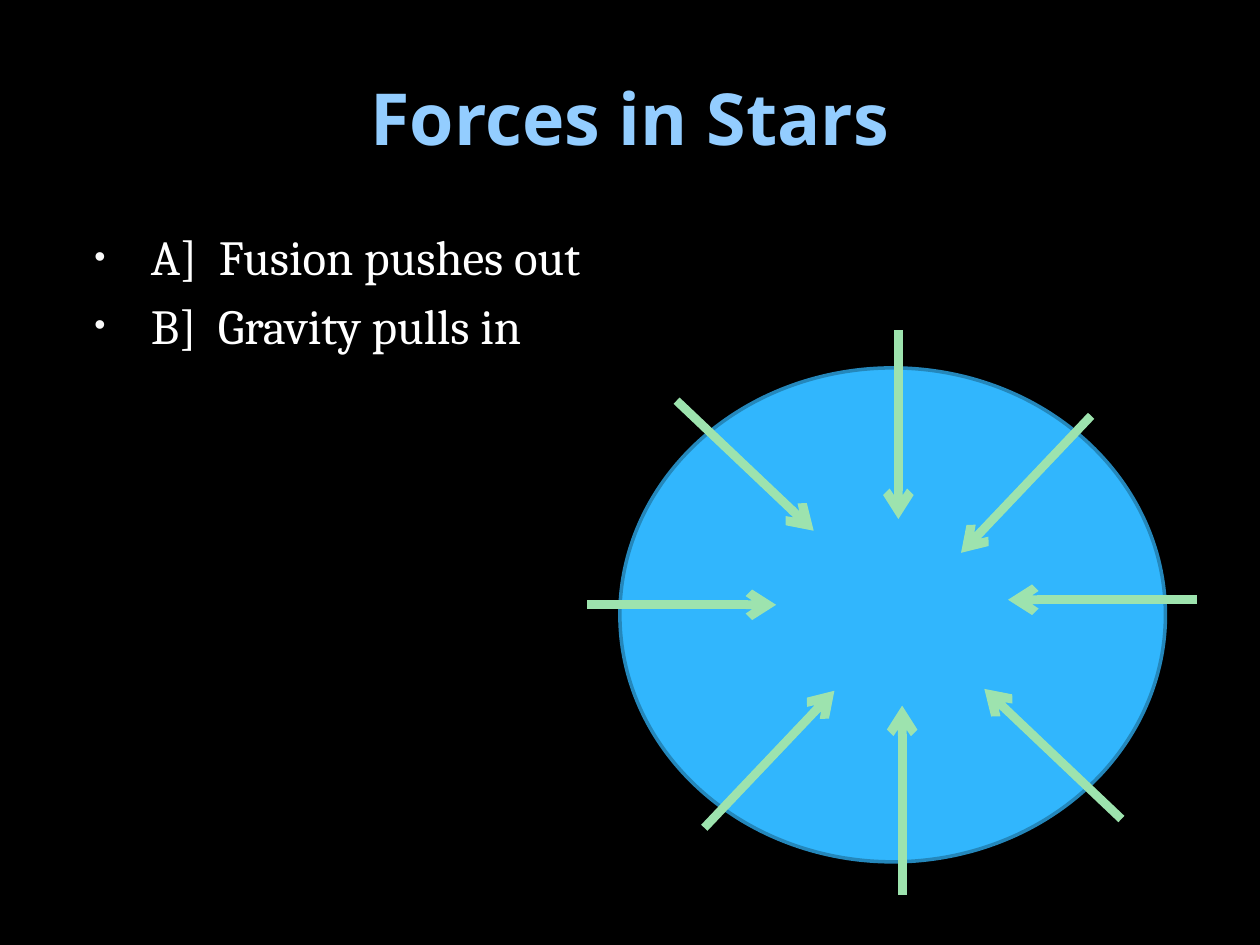
from dataclasses import dataclass
from math import cos, radians, sin

from pptx import Presentation
from pptx.dml.color import RGBColor
from pptx.enum.shapes import MSO_CONNECTOR, MSO_SHAPE
from pptx.enum.text import MSO_ANCHOR, PP_ALIGN
from pptx.oxml.ns import qn
from pptx.util import Inches, Pt
from lxml.etree import SubElement


@dataclass(frozen=True)
class Theme:
    background: str = "000000"
    title: str = "93CDFF"
    body: str = "FFFFFF"
    bullet: str = "F9F9F9"
    star: str = "31B6FD"
    star_edge: str = "2487BB"
    arrow: str = "9DE3AE"
    title_font: str = "Noto Sans"
    body_font: str = "Cambria"
    title_size: float = 41
    body_size: float = 28
    bullet_percent: int = 65
    star_edge_width: float = 2
    arrow_width: float = 5


def apply(target, values):
    for name, value in values.items():
        setattr(target, name, value)


class SlideBuilder:
    COLUMNS, ROWS = 100, 75

    def __init__(self, deck, theme):
        self.theme = theme
        self.column = deck.slide_width / self.COLUMNS
        self.row = deck.slide_height / self.ROWS
        self.page = deck.slides.add_slide(deck.slide_layouts[6])
        self.paint(self.page.background.fill, theme.background)

    def paint(self, fill, color):
        fill.solid()
        fill.fore_color.rgb = RGBColor.from_string(color)

    def place(self, *cells):
        units = (self.column, self.row) * 2
        return [round(cell * unit) for cell, unit in zip(cells, units)]

    def text(self, cells, lines, font, color, frame=None, paragraph=None, bullet=False):
        box = self.page.shapes.add_textbox(*self.place(*cells))
        apply(box.text_frame, {"word_wrap": True, **(frame or {})})
        box.text_frame.text = "\n".join(lines)
        for para in box.text_frame.paragraphs:
            apply(para, paragraph or {})
            for span in para.runs:
                apply(span.font, font)
                self.paint(span.font.fill, color)
            if bullet:
                self.bullet(para)

    def bullet(self, para):
        properties = para._p.get_or_add_pPr()
        properties.set("marL", str(Inches(0.6)))
        properties.set("indent", str(Inches(-0.45)))
        color = SubElement(properties, qn("a:buClr"))
        SubElement(color, qn("a:srgbClr"), val=self.theme.bullet)
        SubElement(properties, qn("a:buSzPct"), val=str(self.theme.bullet_percent * 1000))
        SubElement(properties, qn("a:buFont"), typeface="Arial")
        SubElement(properties, qn("a:buChar"), char="•")

    def star(self, cells):
        star = self.page.shapes.add_shape(MSO_SHAPE.OVAL, *self.place(*cells))
        star.shadow.inherit = False
        self.paint(star.fill, self.theme.star)
        self.paint(star.line.fill, self.theme.star_edge)
        star.line.width = Pt(self.theme.star_edge_width)

    def arrow(self, left, top, degrees, length):
        angle = radians(degrees)
        end = left + length * cos(angle), top + length * sin(angle)
        arrow = self.page.shapes.add_connector(
            MSO_CONNECTOR.STRAIGHT, *self.place(left, top, *end))
        self.paint(arrow.line.fill, self.theme.arrow)
        arrow.line.width = Pt(self.theme.arrow_width)
        SubElement(arrow.line._get_or_add_ln(), qn("a:tailEnd"), type="arrow")
        SubElement(arrow._element.spPr, qn("a:effectLst"))


def main():
    deck = Presentation()
    apply(deck, {"slide_width": Inches(10), "slide_height": Inches(7.5)})
    theme = Theme()
    slide = SlideBuilder(deck, theme)

    slide.text((5, 3, 90, 12.5), ["Forces in Stars"],
               {"name": theme.title_font, "size": Pt(theme.title_size), "bold": True},
               theme.title, {"vertical_anchor": MSO_ANCHOR.MIDDLE},
               {"alignment": PP_ALIGN.CENTER})
    slide.text((5, 17.5, 90, 51.5), ["A]  Fusion pushes out", "B]  Gravity pulls in"],
               {"name": theme.body_font, "size": Pt(theme.body_size)}, theme.body,
               paragraph={"space_before": Pt(theme.body_size * 0.2)}, bullet=True)

    slide.star((49.2, 29.2, 43.3, 39.2))
    gravity_starts = [
        (46.6, 48, 0), (95, 47.6, 180), (71.3, 26.2, 90), (71.6, 71, 270),
        (53.7, 31.8, 43.5), (89, 65, 223.5), (86.6, 33, 133.5), (55.9, 65.7, 313.5),
    ]
    for left, top, degrees in gravity_starts:
        slide.arrow(left, top, degrees, length=15)

    deck.save("out.pptx")


if __name__ == "__main__":
    main()
